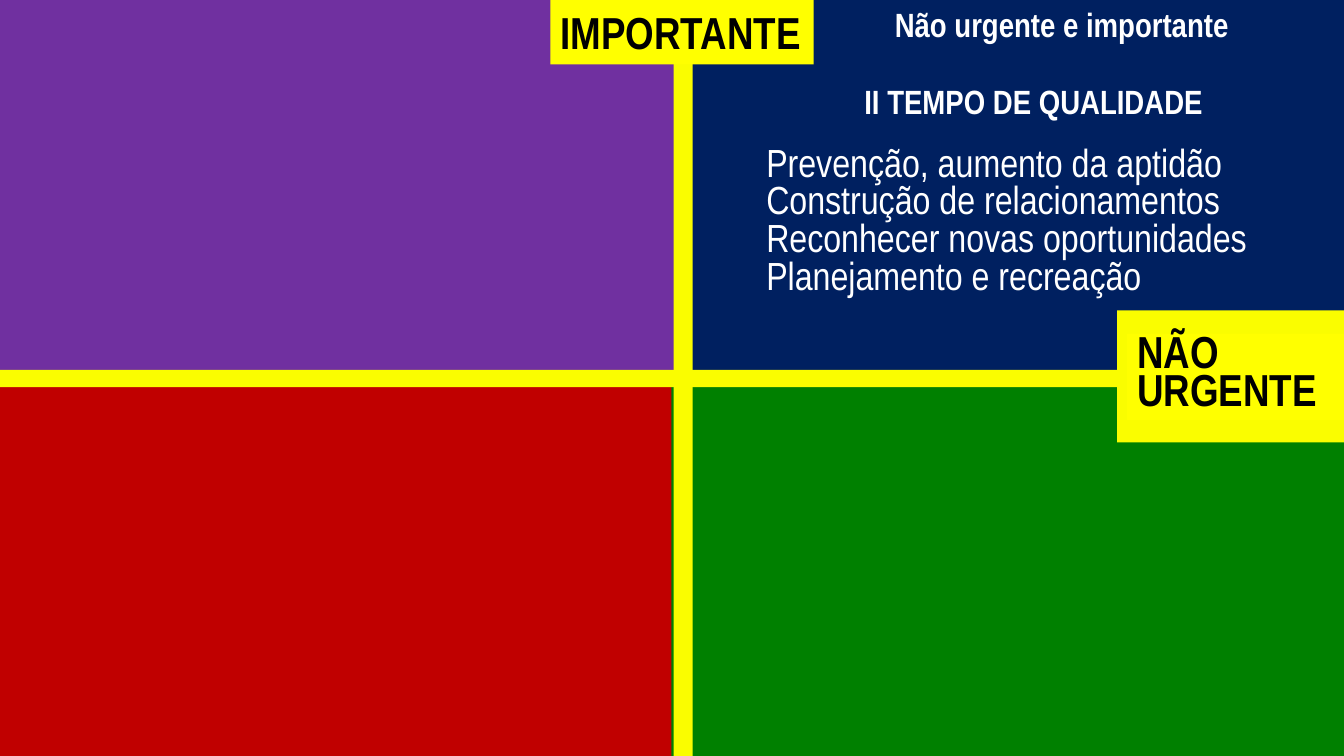
import pptx
import pptx.util
import pptx.dml.color
import pptx.enum.shapes
import pptx.enum.text
import pptx.oxml
import pptx.oxml.ns

Inches, Pt = pptx.util.Inches, pptx.util.Pt
RGBColor = pptx.dml.color.RGBColor
PP_ALIGN = pptx.enum.text.PP_ALIGN

PURPLE = RGBColor(0x70, 0x30, 0xA0)
NAVY = RGBColor(0x00, 0x20, 0x60)
GREEN = RGBColor(0x00, 0x80, 0x00)
RED = RGBColor(0xC0, 0x00, 0x00)
AXIS_YELLOW = RGBColor(0xFA, 0xFD, 0x00)
LABEL_YELLOW = RGBColor(0xFF, 0xFF, 0x00)
BLACK = RGBColor(0x00, 0x00, 0x00)
WHITE = RGBColor(0xFF, 0xFF, 0xFF)
FONT = "Arial Narrow"

HEADING = "Não urgente e importante"
QUADRANT_NAME = "II TEMPO DE QUALIDADE"
ACTIVITIES = [
    "Prevenção, aumento da aptidão",
    "Construção de relacionamentos",
    "Reconhecer novas oportunidades",
    "Planejamento e recreação",
]
URGENCY_LABEL = ["NÃO", "URGENTE"]
IMPORTANCE_LABEL = ["IMPORTANTE"]

WIDTH, HEIGHT = 13.33, 7.5
# Left, top, width, height in inches
QUADRANTS = [
    (PURPLE, (0, 0, 6.69, 3.68)),
    (NAVY, (6.8, 0, 6.69, 3.83)),
    (GREEN, (6.64, 3.83, 6.69, 3.69)),
    (RED, (-0.03, 3.83, 6.69, 3.67)),
]
URGENCY_AXIS = (0, 3.67, WIDTH, 0.17)
URGENCY_PLATE = (11.08, 3.08, 2.44, 1.31)
IMPORTANCE_AXIS = (6.68, 0, 0.19, HEIGHT)

LABEL_FORMAT = {"size": Pt(32), "bold": True, "color": BLACK}
HEADING_FORMAT = {"size": Pt(24), "bold": True, "color": WHITE}
ACTIVITY_FORMAT = {"size": Pt(28), "bold": False, "color": WHITE}

TEXT_SHADOW = (
    '<a:effectLst %s><a:outerShdw blurRad="38100" dist="38100" dir="2700000" algn="tl">'
    '<a:srgbClr val="000000"/></a:outerShdw></a:effectLst>' % pptx.oxml.ns.nsdecls("a")
)


def place(shape, box):
    shape.left, shape.top, shape.width, shape.height = map(Inches, box)


def add_block(slide, color, box):
    block = slide.shapes.add_shape(
        pptx.enum.shapes.MSO_SHAPE.RECTANGLE, *map(Inches, box))
    block.shadow.inherit = False
    block.fill.solid()
    block.fill.fore_color.rgb = color
    block.line.fill.background()
    return block


def write(shape, lines, text_format, align=PP_ALIGN.LEFT, spacing=1.0,
          wrap=True, shadow=False):
    frame = shape.text_frame
    frame.word_wrap = wrap
    frame.auto_size = pptx.enum.text.MSO_AUTO_SIZE.SHAPE_TO_FIT_TEXT
    frame.vertical_anchor = pptx.enum.text.MSO_ANCHOR.TOP
    for index, line in enumerate(lines):
        paragraph = frame.paragraphs[0] if index == 0 else frame.add_paragraph()
        properties = paragraph._p.get_or_add_pPr()
        properties.set("marL", "0")
        properties.set("indent", "0")
        properties.append(pptx.oxml.parse_xml(
            "<a:buNone %s/>" % pptx.oxml.ns.nsdecls("a")))
        for name, value in {"alignment": align, "line_spacing": spacing,
                            "space_before": Pt(0)}.items():
            setattr(paragraph, name, value)
        run = paragraph.add_run()
        run.text = line
        run.font.color.rgb = text_format["color"]
        if shadow:
            run._r.get_or_add_rPr().append(pptx.oxml.parse_xml(TEXT_SHADOW))
        for name in ("size", "bold"):
            setattr(run.font, name, text_format[name])
        run.font.name = FONT


def main():
    deck = pptx.Presentation()
    deck.slide_width, deck.slide_height = Inches(WIDTH), Inches(HEIGHT)
    slide = deck.slides.add_slide(deck.slide_layouts[1])

    for color, box in QUADRANTS:
        add_block(slide, color, box)
    for box in (URGENCY_AXIS, URGENCY_PLATE):
        add_block(slide, AXIS_YELLOW, box)
    urgency = add_block(slide, LABEL_YELLOW, (11.18, 3.31, 2.41, 0.86))
    write(urgency, URGENCY_LABEL, LABEL_FORMAT, spacing=0.7)
    add_block(slide, AXIS_YELLOW, IMPORTANCE_AXIS)
    importance = add_block(slide, LABEL_YELLOW, (5.46, 0, 2.61, 0.64))
    write(importance, IMPORTANCE_LABEL, LABEL_FORMAT, wrap=False)

    heading, activities = slide.shapes.title, slide.placeholders[1]
    place(heading, (8.07, 0.07, 4.92, 0.42))
    write(heading, [HEADING], HEADING_FORMAT, PP_ALIGN.CENTER, 0.8, shadow=True)
    quadrant_name = slide.shapes.add_textbox(*map(Inches, (7.29, 0.75, 5.92, 0.5)))
    write(quadrant_name, [QUADRANT_NAME], HEADING_FORMAT, PP_ALIGN.CENTER)
    place(activities, (7.5, 1.41, 6.18, 1.61))
    write(activities, ACTIVITIES, ACTIVITY_FORMAT, spacing=0.8)

    # Bring the text in front of the quadrants
    for text in (heading, quadrant_name, activities):
        slide.shapes.element.append(text.element)
    deck.save("out.pptx")


if __name__ == "__main__":
    main()
